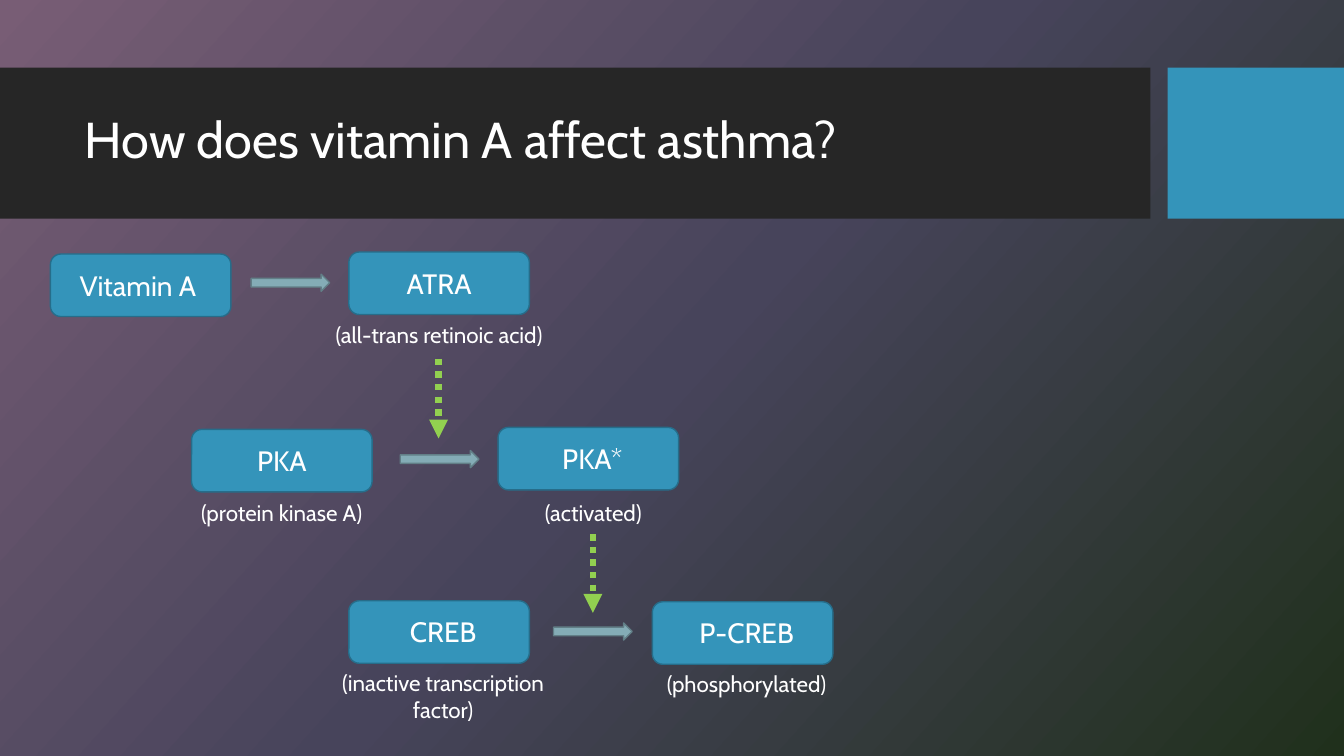
"""Build the slide on how vitamin A affects asthma."""
import copy
from dataclasses import dataclass
from typing import Any

import lxml.etree
import pptx
import pptx.dml.color
import pptx.enum.dml
import pptx.enum.shapes
import pptx.enum.text
import pptx.oxml.ns
import pptx.util

Inches = pptx.util.Inches
Align = pptx.enum.text.PP_ALIGN
Preset = pptx.enum.shapes.MSO_SHAPE
qn = pptx.oxml.ns.qn

FONT = "Cabin"
COLOURS = {
    "band": "262626",
    "node": "3494BA",
    "node_edge": "266D8A",
    "arrow": "84ACB6",
    "arrow_edge": "627F87",
    "signal": "92D050",
    "text": "FFFFFF",
}
BACKDROP = [(0, "785D75"), (0.5, "47445B"), (1, "20301C")]


@dataclass(frozen=True)
class Node:
    label: str
    left: float
    top: float
    label_width: float = 1.41
    align: Any = Align.CENTER


@dataclass(frozen=True)
class Caption:
    text: str
    left: float
    top: float
    height: float = 0.37


@dataclass(frozen=True)
class Step:
    left: float
    top: float


@dataclass(frozen=True)
class Signal:
    x: float
    top: float
    bottom: float


NODES = [
    Node("Vitamin A", 0.5, 2.52, align=Align.LEFT),
    Node("ATRA", 3.46, 2.5),
    Node("PKA", 1.9, 4.26),
    Node("PKA*", 4.94, 4.24, 1.49),
    Node("CREB", 3.46, 5.96, 1.49),
    Node("P-CREB", 6.47, 5.97, 1.49),
]
CAPTIONS = [
    Caption("(all-trans retinoic acid)", 2.97, 3.14),
    Caption("(protein kinase A)", 1.41, 4.9),
    Caption("(activated)", 4.5, 4.9),
    Caption("(inactive transcription factor)", 3.01, 6.59, 0.64),
    Caption("(phosphorylated)", 6.02, 6.6),
]
STEPS = [Step(2.49, 2.72), Step(3.97, 4.47), Step(5.49, 6.18)]
SIGNALS = [Signal(4.35, 3.56, 4.35), Signal(5.88, 5.3, 6.08)]


def colour(name: str) -> pptx.dml.color.RGBColor:
    return pptx.dml.color.RGBColor.from_string(COLOURS[name])


def add_span(para: Any, text: str, size: float) -> None:
    span = para.add_run()
    span.text = text
    span.font.name = FONT
    span.font.size = pptx.util.Pt(size)
    span.font.color.rgb = colour("text")


def add_block(shapes: Any, preset: Any, left: float, top: float, width: float,
              height: float, fill: str, edge: str = "") -> None:
    block = shapes.add_shape(preset, Inches(left), Inches(top), Inches(width), Inches(height))
    block.shadow.inherit = False
    block.fill.solid()
    block.fill.fore_color.rgb = colour(fill)
    if edge:
        block.line.color.rgb = colour(edge)
        block.line.width = pptx.util.Pt(1)
    else:
        block.line.fill.background()


def add_text(shapes: Any, text: str, left: float, top: float, width: float,
             height: float, size: float, align: Any) -> None:
    box = shapes.add_textbox(Inches(left), Inches(top), Inches(width), Inches(height))
    box.text_frame.word_wrap = True
    box.text_frame.auto_size = pptx.enum.text.MSO_AUTO_SIZE.SHAPE_TO_FIT_TEXT
    para = box.text_frame.paragraphs[0]
    para.alignment = align
    add_span(para, text, size)


def add_node(page: Any, node: Node) -> None:
    group = page.shapes.add_group_shape()
    add_block(group.shapes, Preset.ROUNDED_RECTANGLE, node.left, node.top, 1.79, 0.62,
              "node", "node_edge")
    add_text(group.shapes, node.label, node.left + 0.19, node.top + 0.09,
             node.label_width, 0.44, 20, node.align)


def add_signal(page: Any, signal: Signal) -> None:
    arrow = page.shapes.add_connector(
        pptx.enum.shapes.MSO_CONNECTOR.STRAIGHT,
        Inches(signal.x), Inches(signal.top), Inches(signal.x), Inches(signal.bottom))
    arrow.line.color.rgb = colour("signal")
    arrow.line.width = pptx.util.Pt(4.5)
    arrow.line.dash_style = pptx.enum.dml.MSO_LINE.ROUND_DOT
    properties = arrow._element.spPr
    lxml.etree.SubElement(properties.find(qn("a:ln")), qn("a:tailEnd"), type="triangle")
    lxml.etree.SubElement(properties, qn("a:effectLst"))


def paint_backdrop(page: Any) -> None:
    fill = page.background.fill
    fill.gradient()
    fill.gradient_angle = 360 - 42
    stop_list = next(page._element.iter(qn("a:gsLst")))
    stop_list.append(copy.deepcopy(stop_list[-1]))
    for stop, (position, value) in zip(fill.gradient_stops, BACKDROP):
        stop.position = position
        stop.color.rgb = pptx.dml.color.RGBColor.from_string(value)


def add_title(page: Any, text: str) -> None:
    title = page.shapes.title
    page.shapes._spTree.append(title._element)
    title.left, title.top = Inches(0.74), Inches(0.82)
    title.width, title.height = Inches(10.51), Inches(1.18)
    frame = title.text_frame
    frame.word_wrap = True
    frame.auto_size = pptx.enum.text.MSO_AUTO_SIZE.NONE
    frame.vertical_anchor = pptx.enum.text.MSO_ANCHOR.MIDDLE
    para = frame.paragraphs[0]
    para.alignment = Align.LEFT
    para.line_spacing = 0.9
    add_span(para, text, 36)


def main() -> None:
    deck = pptx.Presentation()
    deck.slide_width, deck.slide_height = Inches(13.33), Inches(7.5)
    page = deck.slides.add_slide(deck.slide_layouts.get_by_name("Title Only"))
    paint_backdrop(page)
    add_block(page.shapes, Preset.RECTANGLE, 0, 0.67, 11.41, 1.5, "band")
    add_block(page.shapes, Preset.RECTANGLE, 11.58, 0.67, 1.75, 1.5, "node")
    add_title(page, "How does vitamin A affect asthma?")
    for node in NODES:
        add_node(page, node)
    for step in STEPS:
        add_block(page.shapes, Preset.RIGHT_ARROW, step.left, step.top, 0.78, 0.17,
                  "arrow", "arrow_edge")
    for caption in CAPTIONS:
        add_text(page.shapes, caption.text, caption.left, caption.top, 2.77,
                 caption.height, 16, Align.CENTER)
    for signal in SIGNALS:
        add_signal(page, signal)
    deck.save("out.pptx")


if __name__ == "__main__":
    main()
